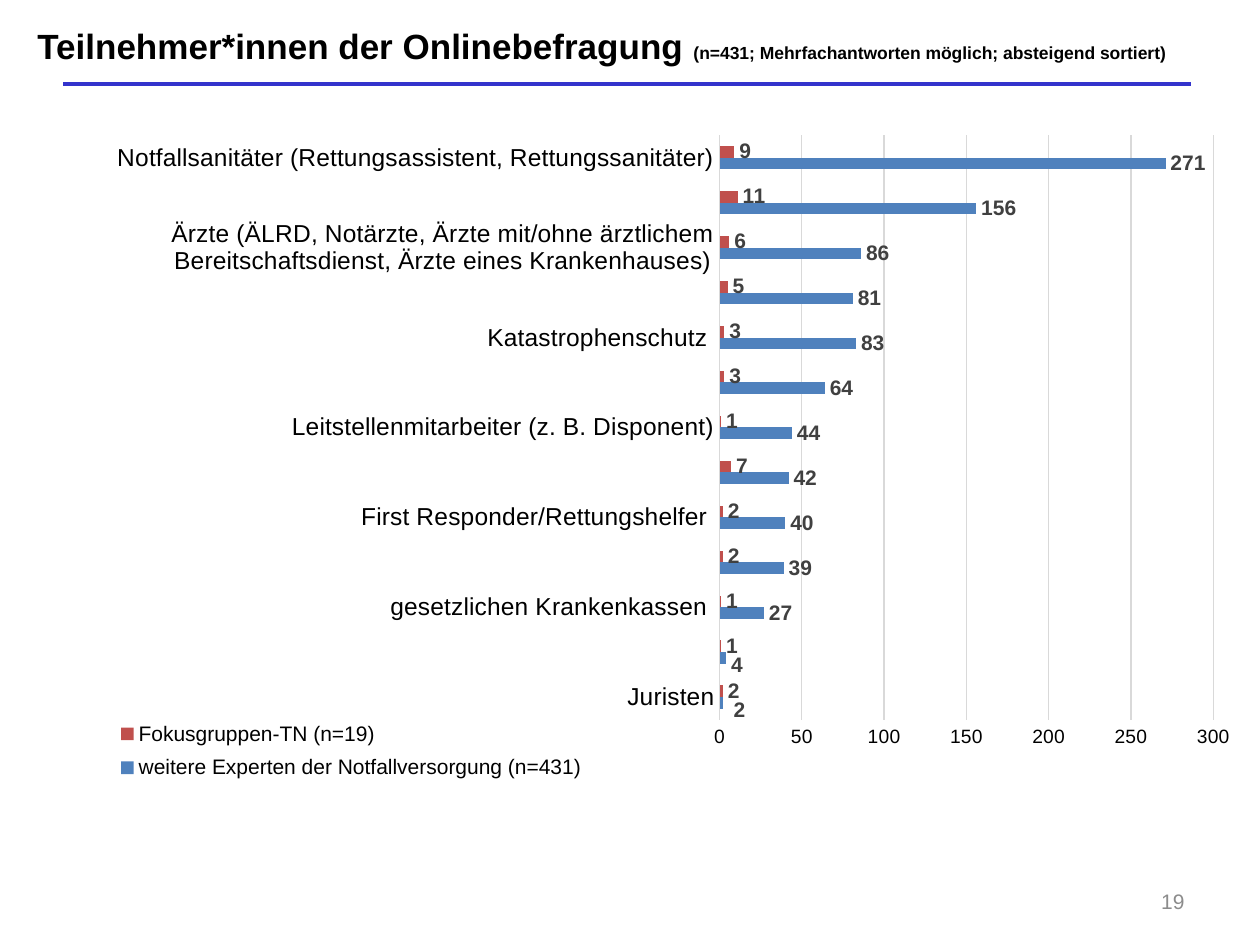
from dataclasses import dataclass

from lxml.etree import SubElement
from pptx import Presentation
from pptx.chart.data import CategoryChartData
from pptx.dml.color import RGBColor
from pptx.enum.chart import XL_CHART_TYPE as Kind
from pptx.enum.chart import XL_LABEL_POSITION as Pos
from pptx.enum.chart import XL_LEGEND_POSITION as Side
from pptx.enum.chart import XL_TICK_MARK as Tick
from pptx.enum.shapes import MSO_CONNECTOR as Link
from pptx.enum.text import MSO_ANCHOR as Anchor
from pptx.enum.text import MSO_AUTO_SIZE as Fit
from pptx.enum.text import PP_ALIGN as Align
from pptx.oxml import parse_xml
from pptx.oxml.ns import nsdecls, qn
from pptx.util import Cm, Pt


@dataclass
class Theme:
    face: str = "Arial"
    base: str = "Calibri"
    black: str = "000000"
    rule: str = "3333CC"
    grid: str = "D9D9D9"
    value: str = "404040"
    page: str = "8C8C8C"
    blue: str = "4F81BD"
    red: str = "C0504D"
    head: int = 20
    note: int = 10
    cat: int = 14
    scale: int = 11
    small: int = 12


theme = Theme()


def style(font, size, color, bold=False, face=theme.face):
    font.name = face
    font.size = Pt(size)
    font.bold = bold
    font.color.rgb = RGBColor.from_string(color)


def place(node, index, modes="", **spots):
    """Give a chart part a manual layout, as shares of the chart area."""
    for old in node.findall(qn("c:layout")):
        node.remove(old)
    marks = modes + "".join(f'<c:{k} val="{v}"/>' for k, v in spots.items())
    node.insert(index, parse_xml(
        f'<c:layout {nsdecls("c")}><c:manualLayout>{marks}'
        "</c:manualLayout></c:layout>"))


deck = Presentation()
deck.slide_width, deck.slide_height = Cm(25.4), Cm(19.05)
slide = deck.slides.add_slide(deck.slide_layouts[5])

# Rule below the title
rule = slide.shapes.add_connector(Link.STRAIGHT, Cm(1.27), Cm(1.7), Cm(24), Cm(1.7))
rule.line.color.rgb = RGBColor.from_string(theme.rule)
rule.line.width = Pt(2.25)
SubElement(rule._element.spPr, qn("a:effectLst"))

# Title
title = slide.shapes.title
title.left, title.top, title.width, title.height = Cm(0.5), Cm(0.36), Cm(23.95), Cm(1.11)
frame = title.text_frame
frame.word_wrap = False
frame.auto_size = Fit.SHAPE_TO_FIT_TEXT
frame.vertical_anchor = Anchor.TOP
line = frame.paragraphs[0]
line.alignment = Align.LEFT
for text, size in (
    ("Teilnehmer*innen der Onlinebefragung ", theme.head),
    ("(n=431; Mehrfachantworten möglich; absteigend sortiert)", theme.note),
):
    run = line.add_run()
    run.text = text
    style(run.font, size, theme.black, True)

# Chart data, from the bottom row to the top: experts, focus group
rows = [
    ("Juristen", 2, 2),
    ("Abgeordnete", 4, 1),
    ("gesetzlichen Krankenkassen ", 27, 1),
    ("andere Berufe", 39, 2),
    ("First Responder/Rettungshelfer ", 40, 2),
    ("Wissenschaftler", 42, 7),
    ("Leitstellenmitarbeiter (z. B. Disponent)", 44, 1),
    ("Übungsleiter im Rettungswesen/der Notfallmedizin", 64, 3),
    ("Katastrophenschutz ", 83, 3),
    ("sonst. Mitarbeiter (Organisatorische Mitarbeiter Rettungsdienst)", 81, 5),
    ("Ärzte (ÄLRD, Notärzte, Ärzte mit/ohne ärztlichem "
     "Bereitschaftsdienst, Ärzte eines Krankenhauses)", 86, 6),
    ("Ausbilder im Rettungswesen/Notfallmedizin", 156, 11),
    ("Notfallsanitäter (Rettungsassistent, Rettungssanitäter)", 271, 9),
]
names, experts, focus = zip(*rows)
data = CategoryChartData()
data.categories = names
data.add_series("weitere Experten der Notfallversorgung (n=431)", experts)
data.add_series("Fokusgruppen-TN (n=19)", focus)

# Chart
chart = slide.shapes.add_chart(
    Kind.BAR_CLUSTERED, Cm(1.3), Cm(2.26), Cm(24.1), Cm(14.55), data).chart
chart.has_title = False
style(chart.font, theme.note, theme.black, face=theme.base)
plot = chart.plots[0]
plot.gap_width = 182
plot.overlap = 0
plot.vary_by_categories = False
edge = '<c:xMode val="edge"/><c:yMode val="edge"/>'
place(chart._chartSpace.chart.plotArea, 0,
      '<c:layoutTarget val="inner"/>' + edge, x=0.548, y=0.032, w=0.413, h=0.81)

# Bars and their values
for bars, color in zip(plot.series, (theme.blue, theme.red)):
    bars.format.fill.solid()
    bars.format.fill.fore_color.rgb = RGBColor.from_string(color)
    bars.invert_if_negative = False
    labels = bars.data_labels
    labels.show_value = True
    labels.position = Pos.OUTSIDE_END
    style(labels.font, theme.small, theme.value, True)

# The two lowest values sit slightly lower
for i, shift in enumerate((0.01, 0)):
    label = plot.series[0].points[i].data_label
    style(label.font, theme.small, theme.value, True)
    label.position = Pos.OUTSIDE_END
    place(label._dLbl, 1, x=shift / 2, y=0.01)

# Axes
cats, scale = chart.category_axis, chart.value_axis
for axis, size in ((cats, theme.cat), (scale, theme.scale)):
    axis.major_tick_mark = axis.minor_tick_mark = Tick.NONE
    style(axis.tick_labels.font, size, theme.black)
scale.minimum_scale, scale.maximum_scale, scale.major_unit = 0, 300, 50
scale.has_major_gridlines = True
scale.format.line.fill.background()
for part in (cats, scale.major_gridlines):
    part.format.line.color.rgb = RGBColor.from_string(theme.grid)
    part.format.line.width = Pt(0.75)

# Legend
chart.has_legend = True
legend = chart.legend
legend.position = Side.BOTTOM
legend.include_in_layout = False
style(legend.font, theme.small, theme.black)
place(legend._element, 1, edge, x=0.04, y=0.83, w=0.4, h=0.11)

# Page number
page = slide.shapes.add_textbox(Cm(18.2), Cm(17.66), Cm(5.93), Cm(1.01))
page.text_frame.word_wrap = True
page.text_frame.vertical_anchor = Anchor.MIDDLE
line = page.text_frame.paragraphs[0]
line.text = "19"
line.alignment = Align.RIGHT
style(line.font, theme.small, theme.page)

deck.save("out.pptx")
